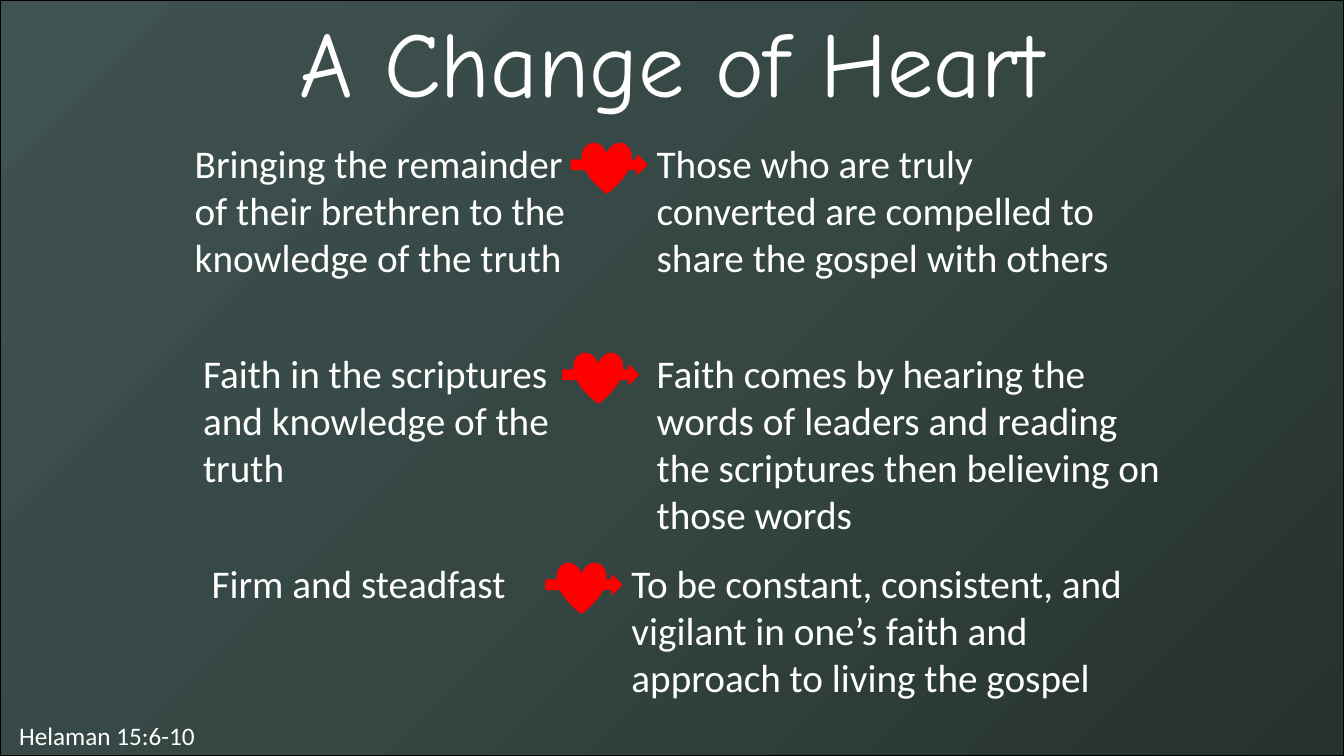
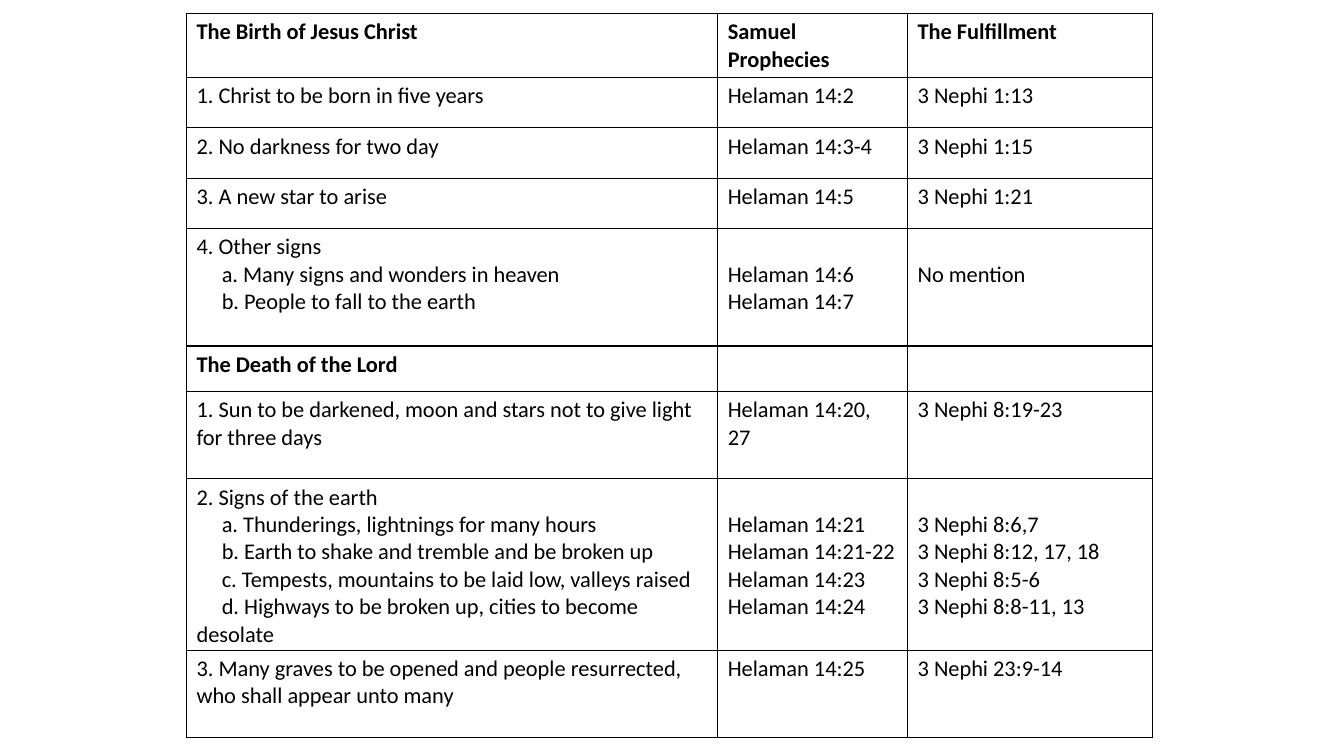
import lxml.etree
import pptx
import pptx.dml.color
import pptx.enum.shapes
import pptx.enum.text
import pptx.oxml
import pptx.oxml.ns
import pptx.util

# Shared look: the slide is a grid of 160 columns by 90 rows
COLORS = {
    "text": "FFFFFF", "heart": "FF0000", "ink": "000000", "paper": "FFFFFF",
    "dark": "25312F", "mid": "354643", "light": "3F5350",
}
BODY_FONT, TITLE_FONT = "Calibri", "Comic Neue"
SLIDE_W, SLIDE_H = pptx.util.Inches(13.33), pptx.util.Inches(7.5)
COLS, ROWS = 160, 90
SHAPES = pptx.enum.shapes.MSO_SHAPE
ALIGN = pptx.enum.text.PP_ALIGN


def gx(cols):
    return round(SLIDE_W * cols / COLS)


def gy(rows):
    return round(SLIDE_H * rows / ROWS)


def box(x, y, w, h):
    return gx(x), gy(y), gx(w), gy(h)


def rgb(name):
    return pptx.dml.color.RGBColor.from_string(COLORS[name])


def style(p, size, color, font=BODY_FONT, bold=False):
    p.font.size = pptx.util.Pt(size)
    p.font.name = font
    p.font.bold = bold
    p.font.color.rgb = rgb(color)


def add_text(s, text, area, size=28, font=BODY_FONT, align=ALIGN.LEFT):
    tf = s.shapes.add_textbox(*box(*area)).text_frame
    tf.word_wrap = True
    tf.auto_size = pptx.enum.text.MSO_AUTO_SIZE.SHAPE_TO_FIT_TEXT
    p = tf.paragraphs[0]
    p.text = text
    p.alignment = align
    style(p, size, "text", font)


def add_solid(shapes, kind, area, fill, line):
    sp = shapes.add_shape(kind, *box(*area))
    sp.shadow.inherit = False
    sp.fill.solid()
    sp.fill.fore_color.rgb = rgb(fill)
    sp.line.color.rgb = rgb(line)
    sp.line.width = pptx.util.Pt(1)
    return sp


def add_backdrop(s):
    sp = add_solid(s.shapes, SHAPES.RECTANGLE, (0, 0, COLS, ROWS), "dark", "ink")
    stops = "".join(
        f'<a:gs pos="{pos}"><a:srgbClr val="{COLORS[name]}"/></a:gs>'
        for pos, name in ((0, "dark"), (50000, "mid"), (100000, "light")))
    grad = pptx.oxml.parse_xml(
        f'<a:gradFill {pptx.oxml.ns.nsdecls("a")} rotWithShape="1">'
        f'<a:gsLst>{stops}</a:gsLst><a:path path="circle">'
        '<a:fillToRect l="100000" t="100000"/></a:path></a:gradFill>')
    solid = sp.element.spPr.find(pptx.oxml.ns.qn("a:solidFill"))
    solid.getparent().replace(solid, grad)


def add_heart_arrow(s, x, y):
    grp = s.shapes.add_group_shape()
    for kind, area in ((SHAPES.HEART, (x + 1.35, y, 5.75, 6)),
                       (SHAPES.RIGHT_ARROW, (x, y + 1.5, 9, 2.25))):
        add_solid(grp.shapes, kind, area, "heart", "heart")


def set_borders(cell):
    tcPr = cell._tc.get_or_add_tcPr()
    for i, side in enumerate(("lnL", "lnR", "lnT", "lnB")):
        tcPr.insert(i, pptx.oxml.parse_xml(
            f'<a:{side} {pptx.oxml.ns.nsdecls("a")} w="12700"><a:solidFill>'
            f'<a:srgbClr val="{COLORS["ink"]}"/></a:solidFill></a:{side}>'))


def fill_cell(cell, lines, bold, lowered):
    """Write the lines; a lowered cell starts one text line further down."""
    cell.fill.solid()
    cell.fill.fore_color.rgb = rgb("paper")
    cell.margin_top = pptx.util.Inches(0.32 if lowered else 0.05)
    tf = cell.text_frame
    tf.text = "\n".join(lines)
    for p in tf.paragraphs:
        style(p, 16, "ink", bold=bold)
        if p.text[:2] in ("a.", "b.", "c.", "d."):
            pPr = p._p.get_or_add_pPr()
            pPr.set("marL", "0")
            pPr.set("indent", str(pptx.util.Inches(0.25)))
    set_borders(cell)


def add_table(s, x, y, widths, rows):
    """Each row is (height, bold, cells); each cell is a list of lines."""
    heights = [row[0] for row in rows]
    tbl = s.shapes.add_table(len(rows), len(widths),
                             *box(x, y, sum(widths), sum(heights))).table
    tbl.first_row = tbl.horz_banding = False
    for col, w in zip(tbl.columns, widths):
        col.width = gx(w)
    for r, (height, bold, cells) in enumerate(rows):
        tbl.rows[r].height = gy(height)
        for c, lines in enumerate(cells):
            lowered = c > 0 and len(cells[0]) > 1
            fill_cell(tbl.cell(r, c), lines, bold, lowered)


# Slide content: left x and width, arrow x, right x and width
CHANGES = [
    ("Bringing the remainder of their brethren to the knowledge of the truth",
     "Those who are truly converted are compelled to share the gospel with others",
     (22, 47), 68, (77, 57)),
    ("Faith in the scriptures and knowledge of the truth",
     "Faith comes by hearing the words of leaders and reading the scriptures "
     "then believing on those words",
     (23, 44), 67, (77, 63)),
    ("Firm and steadfast",
     "To be constant, consistent, and vigilant in one’s faith and approach to "
     "living the gospel",
     (24, 44), 65, (74, 63)),
]

PROPHECIES = [
    (7.6, True, (["The Birth of Jesus Christ"], ["Samuel Prophecies"],
                 ["The Fulfillment"])),
    (6, False, (["1. Christ to be born in five years"], ["Helaman 14:2"],
                ["3 Nephi 1:13"])),
    (6, False, (["2. No darkness for two day"], ["Helaman 14:3-4"],
                ["3 Nephi 1:15"])),
    (6, False, (["3. A new star to arise"], ["Helaman 14:5"], ["3 Nephi 1:21"])),
    (14, False, (["4. Other signs", "a. Many signs and wonders in heaven",
                  "b. People to fall to the earth"],
                 ["Helaman 14:6", "Helaman 14:7"], ["No mention"])),
    (5.4, True, (["The Death of the Lord"], [], [])),
    (10.4, False, (["1. Sun to be darkened, moon and stars not to give light "
                    "for three days"],
                   ["Helaman 14:20, 27"], ["3 Nephi 8:19-23"])),
    (20.4, False, (["2. Signs of the earth",
                    "a. Thunderings, lightnings for many hours",
                    "b. Earth to shake and tremble and be broken up",
                    "c. Tempests, mountains to be laid low, valleys raised",
                    "d. Highways to be broken up, cities to become desolate"],
                   ["Helaman 14:21", "Helaman 14:21-22", "Helaman 14:23",
                    "Helaman 14:24"],
                   ["3 Nephi 8:6,7", "3 Nephi 8:12, 17, 18", "3 Nephi 8:5-6",
                    "3 Nephi 8:8-11, 13"])),
    (10.4, False, (["3. Many graves to be opened and people resurrected, who "
                    "shall appear unto many"],
                   ["Helaman 14:25"], ["3 Nephi 23:9-14"])),
]


def main():
    prs = pptx.Presentation()
    prs.slide_width, prs.slide_height = SLIDE_W, SLIDE_H
    blank = prs.slide_layouts[6]

    # Slide 1: paired statements joined by hearts
    s = prs.slides.add_slide(blank)
    add_backdrop(s)
    add_text(s, "Helaman 15:6-10", (1.1, 85.2, 28, 4.8), size=18)
    add_text(s, "A Change of Heart", (23, 0, 114, 14.5), 66, TITLE_FONT,
             ALIGN.CENTER)
    for i, (cause, meaning, left, arrow_x, right) in enumerate(CHANGES):
        y = 16 + 25 * i
        for text, (x, w) in ((cause, left), (meaning, right)):
            add_text(s, text, (x, y, w, 18))
        add_heart_arrow(s, arrow_x, y + 1)

    # Slide 2: prophecies and their fulfillment
    s = prs.slides.add_slide(blank)
    add_table(s, 22.2, 1.6, (63.25, 22.6, 29.2), PROPHECIES)

    prs.save("out.pptx")


if __name__ == "__main__":
    main()
